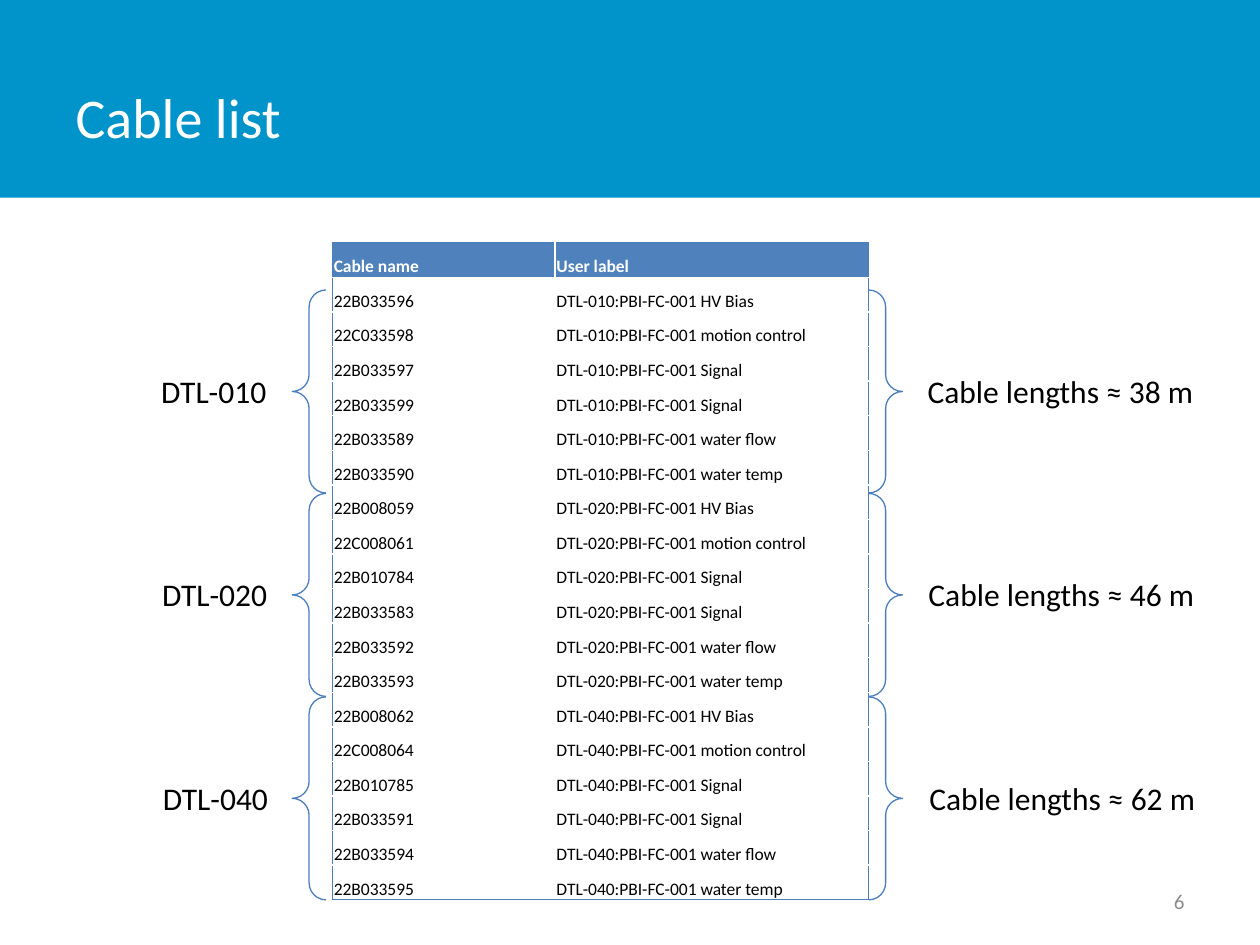
"""Build the cable list slide with its table, braces and cable lengths."""
from dataclasses import dataclass

from lxml.etree import SubElement
from pptx import Presentation
from pptx.dml.color import RGBColor
from pptx.enum.shapes import MSO_SHAPE
from pptx.enum.text import MSO_ANCHOR, MSO_AUTO_SIZE, PP_ALIGN
from pptx.oxml.ns import qn
from pptx.util import Pt

SIGNALS = ["HV Bias", "motion control", "Signal", "Signal", "water flow", "water temp"]
GROUPS = [
    ("DTL-010", "38 m", ["22B033596", "22C033598", "22B033597",
                         "22B033599", "22B033589", "22B033590"]),
    ("DTL-020", "46 m", ["22B008059", "22C008061", "22B010784",
                         "22B033583", "22B033592", "22B033593"]),
    ("DTL-040", "62 m", ["22B008062", "22C008064", "22B010785",
                         "22B033591", "22B033594", "22B033595"]),
]


def color(value):
    return RGBColor.from_string(value)


def write_text(frame, text, *, font, size, fill, bold=False,
               align=PP_ALIGN.LEFT, anchor=MSO_ANCHOR.TOP):
    frame.vertical_anchor = anchor
    paragraph = frame.paragraphs[0]
    paragraph.alignment = align
    run = paragraph.add_run()
    run.text = text
    run.font.name = font
    run.font.size = Pt(size)
    run.font.bold = bold
    run.font.color.rgb = color(fill)


@dataclass
class SlideBuilder:
    slide: object
    font: str = "Calibri"
    banner: str = "0094CA"
    header: str = "4F81BD"
    outline: str = "4B7EBC"
    line_width: float = 0.75

    def title(self, text, box):
        title = self.slide.shapes.title
        title.left, title.top, title.width, title.height = map(Pt, box)
        write_text(title.text_frame, text, font=self.font, size=32,
                   fill="FFFFFF", anchor=MSO_ANCHOR.MIDDLE)

    def band(self, box):
        shape = self.slide.shapes.add_shape(MSO_SHAPE.RECTANGLE, *map(Pt, box))
        shape.shadow.inherit = False
        shape.fill.solid()
        shape.fill.fore_color.rgb = color(self.banner)
        shape.line.fill.background()
        self.slide.shapes._spTree.insert(2, shape._element)

    def braces(self, box):
        shape = self.slide.shapes.add_shape(MSO_SHAPE.DOUBLE_BRACE, *map(Pt, box))
        shape.shadow.inherit = False
        shape.fill.background()
        shape.line.color.rgb = color(self.outline)
        shape.line.width = Pt(self.line_width)

    def label(self, text, box, size=18, fill="000000", wrap=False, **text_format):
        frame = self.slide.shapes.add_textbox(*map(Pt, box)).text_frame
        frame.word_wrap = wrap
        frame.auto_size = MSO_AUTO_SIZE.NONE if wrap else MSO_AUTO_SIZE.SHAPE_TO_FIT_TEXT
        write_text(frame, text, font=self.font, size=size, fill=fill, **text_format)

    def border(self, cell, side):
        line = SubElement(cell._tc.get_or_add_tcPr(), qn(f"a:ln{side}"),
                          w=str(Pt(self.line_width)))
        solid = SubElement(line, qn("a:solidFill"))
        SubElement(solid, qn("a:srgbClr"), val=self.outline)

    def cell(self, cell, text, sides, is_header):
        cell.margin_left = cell.margin_right = cell.margin_top = Pt(0.75)
        cell.margin_bottom = 0
        cell.vertical_anchor = MSO_ANCHOR.BOTTOM
        for side in sides:
            self.border(cell, side)
        if is_header:
            cell.fill.solid()
            cell.fill.fore_color.rgb = color(self.header)
        else:
            cell.fill.background()
        write_text(cell.text_frame, text, font=self.font, size=10, bold=is_header,
                   fill="FFFFFF" if is_header else "000000", anchor=MSO_ANCHOR.BOTTOM)

    def table(self, rows, left, top, column_widths, row_height):
        table = self.slide.shapes.add_table(
            len(rows), len(column_widths), Pt(left), Pt(top),
            Pt(sum(column_widths)), Pt(row_height * len(rows))).table
        table.horz_banding = False
        for column, width in zip(table.columns, column_widths):
            column.width = Pt(width)
        for row_index, values in enumerate(rows):
            table.rows[row_index].height = Pt(row_height)
            for column_index, text in enumerate(values):
                sides = ["R" if column_index else "L"]
                if row_index == 0:
                    sides.append("T")
                if row_index == len(rows) - 1:
                    sides.append("B")
                self.cell(table.cell(row_index, column_index), text, sides, row_index == 0)


def main():
    presentation = Presentation()
    presentation.slide_width, presentation.slide_height = Pt(720), Pt(540)
    builder = SlideBuilder(presentation.slides.add_slide(presentation.slide_layouts[5]))

    builder.band((0, 0, 720, 113))
    builder.title("Cable list", (36, 21.6, 562, 90))
    builder.label("6", (516, 500.5, 168, 28.75), size=12, fill="8C8C8C", wrap=True,
                  align=PP_ALIGN.RIGHT, anchor=MSO_ANCHOR.MIDDLE)

    rows = [("Cable name", "User label")]
    for section, _, cables in GROUPS:
        rows += [(cable, f"{section}:PBI-FC-001 {signal}")
                 for cable, signal in zip(cables, SIGNALS)]
    builder.table(rows, 190, 138.75, (127.25, 179), 19.78)

    for index, (section, length, _) in enumerate(GROUPS):
        top = 165.75 + 116.25 * index
        builder.braces((167, top, 348.75, 116))
        builder.label(section, (85 + 0.5 * index, top + 43.25, 75.5, 29))
        builder.label(f"Cable lengths ≈ {length}",
                      (523 + 0.5 * index, top + 43.25, 168.5, 29))

    presentation.save("out.pptx")


if __name__ == "__main__":
    main()
